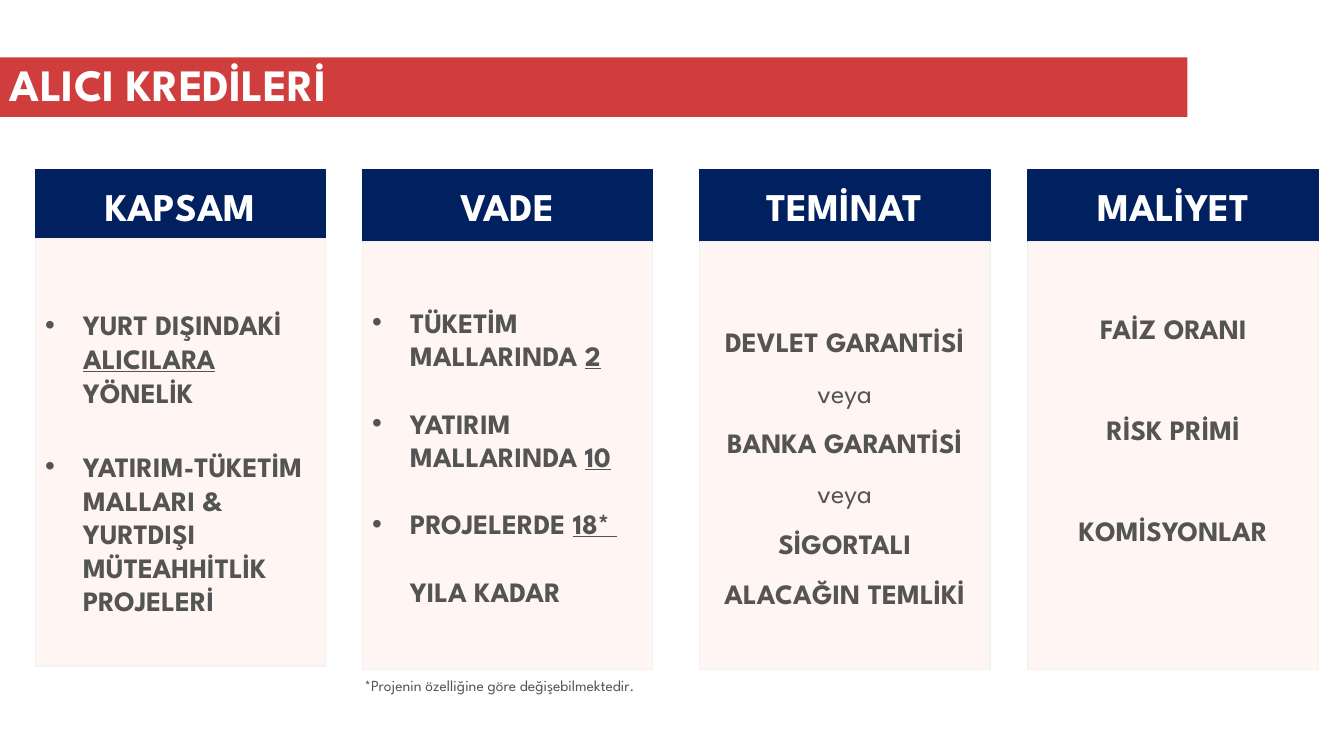
"""Build the slide on buyer credits: a title band and four headed columns."""
import pptx
import pptx.dml.color
import pptx.enum.shapes
import pptx.enum.text
import pptx.oxml
import pptx.oxml.ns
import pptx.util
from lxml import etree

Pt = pptx.util.Pt
RGBColor = pptx.dml.color.RGBColor
ALIGN = pptx.enum.text.PP_ALIGN
ANCHOR = pptx.enum.text.MSO_ANCHOR
FIT = pptx.enum.text.MSO_AUTO_SIZE

FONT = "League Spartan"
WHITE = RGBColor(0xFF, 0xFF, 0xFF)
NAVY = RGBColor(0x00, 0x20, 0x60)
RED = RGBColor(0xC0, 0x00, 0x00)
CREAM = RGBColor(0xFF, 0xF6, 0xF3)
PALE = RGBColor(0xF2, 0xF2, 0xF2)
GREY = RGBColor(0x54, 0x54, 0x54)

TITLE = "ALICI KREDİLERİ"
FOOTNOTE = "*Projenin özelliğine göre değişebilmektedir."

# Each span is (text, underlined); a column is heading, left, body top, inset, gap, spacing, style, lines.
COLUMNS = [
    dict(heading="KAPSAM", left=25.2, top=170.6, inset=49.4, gap=29, spacing=1, lines=[
        ("bullet", [("YURT DIŞINDAKİ ", False), ("ALICILARA", True), (" YÖNELİK", False)]),
        ("bullet", [("YATIRIM-TÜKETİM MALLARI & YURTDIŞI MÜTEAHHİTLİK PROJELERİ", False)]),
    ]),
    dict(heading="VADE", left=258.8, top=172.8, inset=45.3, gap=24, spacing=1, lines=[
        ("bullet", [("TÜKETİM MALLARINDA ", False), ("2", True)]),
        ("bullet", [("YATIRIM MALLARINDA ", False), ("10", True)]),
        ("bullet", [("PROJELERDE ", False), ("18* ", True)]),
        ("indent", [("YILA KADAR", False)]),
    ]),
    dict(heading="TEMİNAT", left=499.7, top=172.8, inset=47.2, gap=0, spacing=1.5, lines=[
        ("centre", [("DEVLET GARANTİSİ", False)]),
        ("light", [("veya", False)]),
        ("centre", [("BANKA GARANTİSİ", False)]),
        ("light", [("veya", False)]),
        ("centre", [("SİGORTALI ALACAĞIN TEMLİKİ", False)]),
    ]),
    dict(heading="MALİYET", left=734.4, top=172.8, inset=50, gap=48, spacing=1, lines=[
        ("centre", [("FAİZ ORANI", False)]),
        ("centre", [("RİSK PRİMİ", False)]),
        ("centre", [("KOMİSYONLAR", False)]),
    ]),
]
COLUMN_WIDTH = 207.4
HEADING_TOP, HEADING_HEIGHT = 121, 52.6
BODY_HEIGHT = 305.3
BULLET_INDENT = 27


def set_font(paragraph, size, colour, bold):
    font = paragraph.font
    font.name, font.size, font.bold = FONT, Pt(size), bold
    font.color.rgb = colour


def add_panel(page, left, top, width, height, fill, outline=None):
    box = page.shapes.add_shape(pptx.enum.shapes.MSO_SHAPE.RECTANGLE,
                                Pt(left), Pt(top), Pt(width), Pt(height))
    box.shadow.inherit = False
    box.fill.solid()
    box.fill.fore_color.rgb = fill
    if outline is None:
        box.line.fill.background()
    else:
        box.line.color.rgb = outline
        box.line.width = Pt(1)
    box.text_frame.word_wrap = True
    return box


def write_line(box, text, size, colour, bold, align, spacing=1):
    paragraph = box.text_frame.paragraphs[0]
    paragraph.text = text
    paragraph.alignment = align
    paragraph.line_spacing = spacing
    set_font(paragraph, size, colour, bold)


def indent(paragraph, bulleted):
    properties = paragraph._p.get_or_add_pPr()
    properties.set("marL", str(Pt(BULLET_INDENT)))
    if bulleted:
        properties.set("indent", str(-Pt(BULLET_INDENT)))
        typeface = etree.SubElement(properties, pptx.oxml.ns.qn("a:buFont"))
        typeface.set("typeface", "Arial")
        bullet = etree.SubElement(properties, pptx.oxml.ns.qn("a:buChar"))
        bullet.set("char", "•")


def add_body(page, column):
    box = add_panel(page, column["left"], column["top"], COLUMN_WIDTH, BODY_HEIGHT, CREAM, PALE)
    frame = box.text_frame
    frame.vertical_anchor = ANCHOR.TOP
    frame.margin_top = Pt(column["inset"])
    for number, (style, spans) in enumerate(column["lines"]):
        paragraph = frame.add_paragraph() if number else frame.paragraphs[0]
        paragraph.line_spacing = column["spacing"]
        if number:
            paragraph.space_before = Pt(column["gap"])
        if style in ("bullet", "indent"):
            paragraph.alignment = ALIGN.LEFT
            indent(paragraph, style == "bullet")
        else:
            paragraph.alignment = ALIGN.CENTER
        set_font(paragraph, 20, GREY, style != "light")
        for text, underlined in spans:
            span = paragraph.add_run()
            span.text = text
            if underlined:
                span.font.underline = True


def add_title(page):
    band = add_panel(page, 0, 41, 848.2, 42.5, RED)
    colour = band.fill._xPr.find(".//" + pptx.oxml.ns.qn("a:srgbClr"))
    etree.SubElement(colour, pptx.oxml.ns.qn("a:alpha")).set("val", "76000")
    band.text_frame.vertical_anchor = ANCHOR.TOP
    write_line(band, TITLE, 32, WHITE, True, ALIGN.LEFT, 0.9)


def add_footnote(page):
    note = page.shapes.add_textbox(Pt(253.4), Pt(481), Pt(244), Pt(19.4))
    note.text_frame.word_wrap = False
    note.text_frame.auto_size = FIT.SHAPE_TO_FIT_TEXT
    write_line(note, FOOTNOTE, 11, GREY, False, ALIGN.LEFT, 0.9)


def main():
    deck = pptx.Presentation()
    deck.slide_width, deck.slide_height = Pt(960), Pt(540)
    page = deck.slides.add_slide(deck.slide_layouts[6])
    for column in COLUMNS:
        heading = add_panel(page, column["left"], HEADING_TOP, COLUMN_WIDTH, HEADING_HEIGHT, NAVY, NAVY)
        heading.text_frame.vertical_anchor = ANCHOR.MIDDLE
        write_line(heading, column["heading"], 28, WHITE, True, ALIGN.CENTER)
    for column in COLUMNS:
        add_body(page, column)
    add_title(page)
    add_footnote(page)
    deck.save("out.pptx")


if __name__ == "__main__":
    main()
